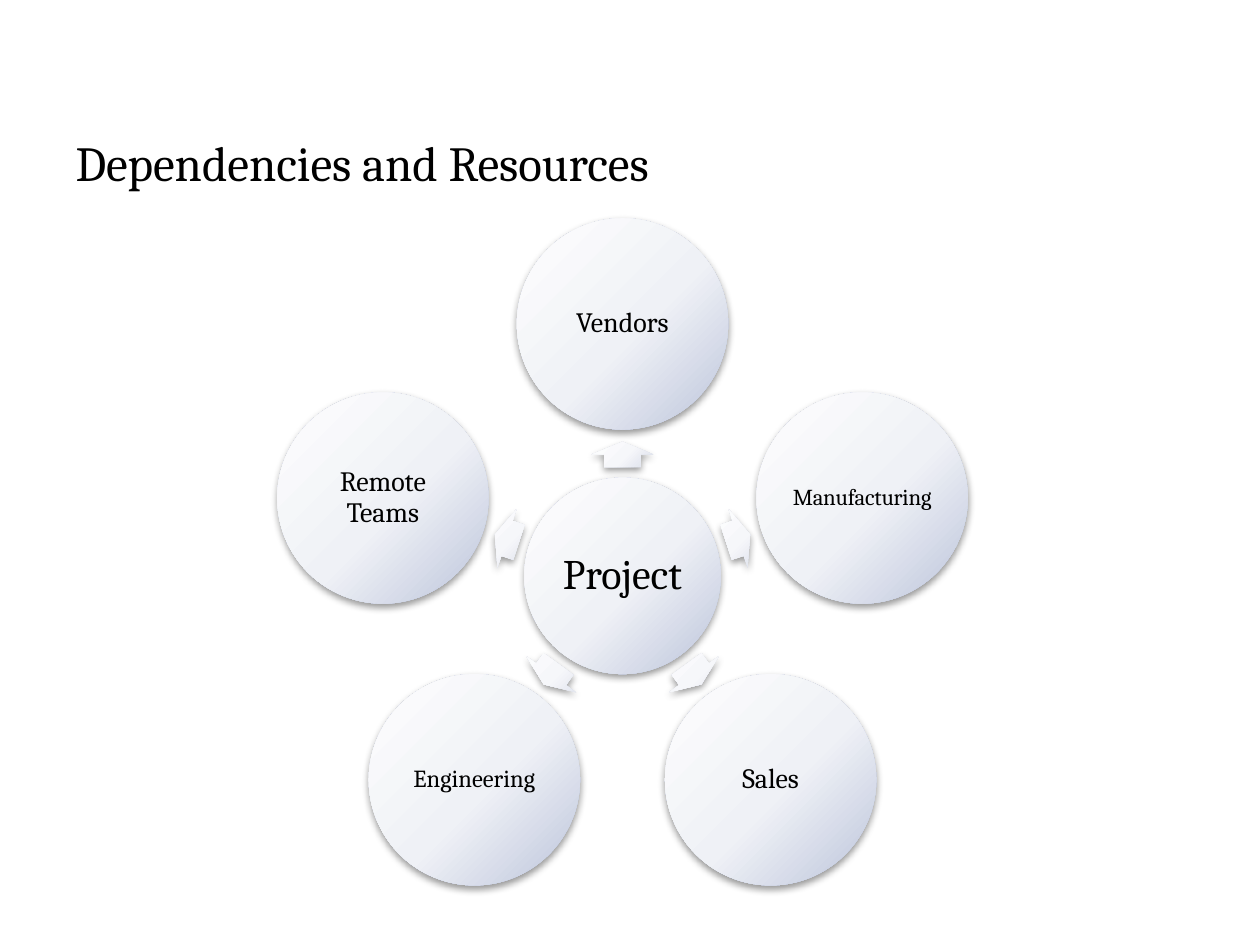
from dataclasses import dataclass
from math import cos, radians, sin

from pptx import Presentation
from pptx.dml.color import RGBColor
from pptx.enum.shapes import MSO_SHAPE
from pptx.enum.text import MSO_ANCHOR, PP_ALIGN
from pptx.oxml import parse_xml
from pptx.oxml.ns import nsdecls, qn
from pptx.shapes.autoshape import Shape
from pptx.shapes.shapetree import GroupShapes
from pptx.text.text import _Run as Run
from pptx.util import Cm, Pt

FONT = "Cambria"
BLACK = RGBColor(0x00, 0x00, 0x00)
CIRCLE_STOPS = (
    (0, RGBColor(0xFE, 0xFE, 0xFE)),
    (55, RGBColor(0xEF, 0xF1, 0xF6)),
    (100, RGBColor(0xBC, 0xC4, 0xDB)),
)
ARROW_STOPS = (
    (0, RGBColor(0xFE, 0xFE, 0xFF)),
    (55, RGBColor(0xF6, 0xF7, 0xFA)),
    (100, RGBColor(0xDA, 0xDE, 0xEA)),
)

# Lengths in centimetres
CENTER_X, CENTER_Y = 12.55, 11.61
HUB_DIAMETER = 3.96
NODE_DIAMETER = 4.26
NODE_ORBIT = 5.08
ARROW_LENGTH, ARROW_WIDTH = 0.51, 1.24
ARROW_ORBIT = 2.45


@dataclass(frozen=True)
class Node:
    label: str
    size: float
    inset: float = 0.05
    spacing: int = 0  # hundredths of a point


HUB = Node("Project", 24, 0.08)
NODES = (
    Node("Vendors", 16),
    Node("Manufacturing", 13, 0, -10),
    Node("Sales", 16),
    Node("Engineering", 14),
    Node("Remote Teams", 16),
)


def set_font(span: Run, size: float) -> None:
    span.font.name = FONT
    span.font.size = Pt(size)
    span.font.color.rgb = BLACK


def style_shape(shape: Shape, stops: tuple) -> None:
    """Give a shape a radial gradient, no outline and a soft drop shadow."""
    shape.line.fill.background()
    shape.shadow.inherit = False
    properties = shape.element.spPr
    stop_xml = "".join(
        f'<a:gs pos="{place * 1000}"><a:srgbClr val="{color}"/></a:gs>'
        for place, color in stops
    )
    gradient = parse_xml(
        f'<a:gradFill {nsdecls("a")} rotWithShape="1"><a:gsLst>{stop_xml}</a:gsLst>'
        '<a:path path="circle"><a:fillToRect l="-40000" t="-90000" r="140000" b="190000"/>'
        "</a:path></a:gradFill>"
    )
    properties.find(qn("a:ln")).addprevious(gradient)
    shadow = parse_xml(
        f'<a:outerShdw {nsdecls("a")} blurRad="{Pt(4.1)}" dist="{Pt(2)}" dir="5400000" '
        'rotWithShape="0"><a:srgbClr val="000000"><a:alpha val="40000"/></a:srgbClr>'
        "</a:outerShdw>"
    )
    properties.find(qn("a:effectLst")).append(shadow)


def add_centered(shapes: GroupShapes, kind: MSO_SHAPE, x: float, y: float,
                 width: float, height: float, stops: tuple) -> Shape:
    shape = shapes.add_shape(
        kind, Cm(x - width / 2), Cm(y - height / 2), Cm(width), Cm(height)
    )
    style_shape(shape, stops)
    return shape


def add_circle(shapes: GroupShapes, node: Node, x: float, y: float, diameter: float) -> None:
    circle = add_centered(shapes, MSO_SHAPE.OVAL, x, y, diameter, diameter, CIRCLE_STOPS)
    box = circle.text_frame
    box.word_wrap = True
    box.vertical_anchor = MSO_ANCHOR.MIDDLE
    box.margin_left = box.margin_right = box.margin_top = box.margin_bottom = Cm(node.inset)
    para = box.paragraphs[0]
    para.alignment = PP_ALIGN.CENTER
    para.line_spacing = 0.9
    span = para.add_run()
    span.text = node.label
    set_font(span, node.size)
    if node.spacing:
        span.font._element.set("spc", str(node.spacing))


def add_arrow(shapes: GroupShapes, x: float, y: float, angle: float) -> None:
    arrow = add_centered(
        shapes, MSO_SHAPE.RIGHT_ARROW, x, y, ARROW_LENGTH, ARROW_WIDTH, ARROW_STOPS
    )
    arrow.adjustments[0] = 0.6
    arrow.adjustments[1] = 0.5
    arrow.rotation = angle % 360


def orbit_point(radius: float, angle: float) -> tuple[float, float]:
    return (CENTER_X + radius * cos(radians(angle)),
            CENTER_Y + radius * sin(radians(angle)))


def main() -> None:
    deck = Presentation()
    deck.slide_width, deck.slide_height = Cm(25.4), Cm(19.05)
    page = deck.slides.add_slide(deck.slide_layouts[5])

    title = page.shapes.title
    title.left, title.top, title.width, title.height = Cm(1.27), Cm(2.54), Cm(22.86), Cm(2.54)
    title.text_frame.vertical_anchor = MSO_ANCHOR.TOP
    para = title.text_frame.paragraphs[0]
    para.alignment = PP_ALIGN.LEFT
    span = para.add_run()
    span.text = "Dependencies and Resources"
    set_font(span, 28)

    diagram = page.shapes.add_group_shape().shapes
    add_circle(diagram, HUB, CENTER_X, CENTER_Y, HUB_DIAMETER)
    for index, node in enumerate(NODES):
        angle = -90 + index * 360 / len(NODES)
        add_arrow(diagram, *orbit_point(ARROW_ORBIT, angle), angle)
        add_circle(diagram, node, *orbit_point(NODE_ORBIT, angle), NODE_DIAMETER)

    deck.save("out.pptx")


if __name__ == "__main__":
    main()
